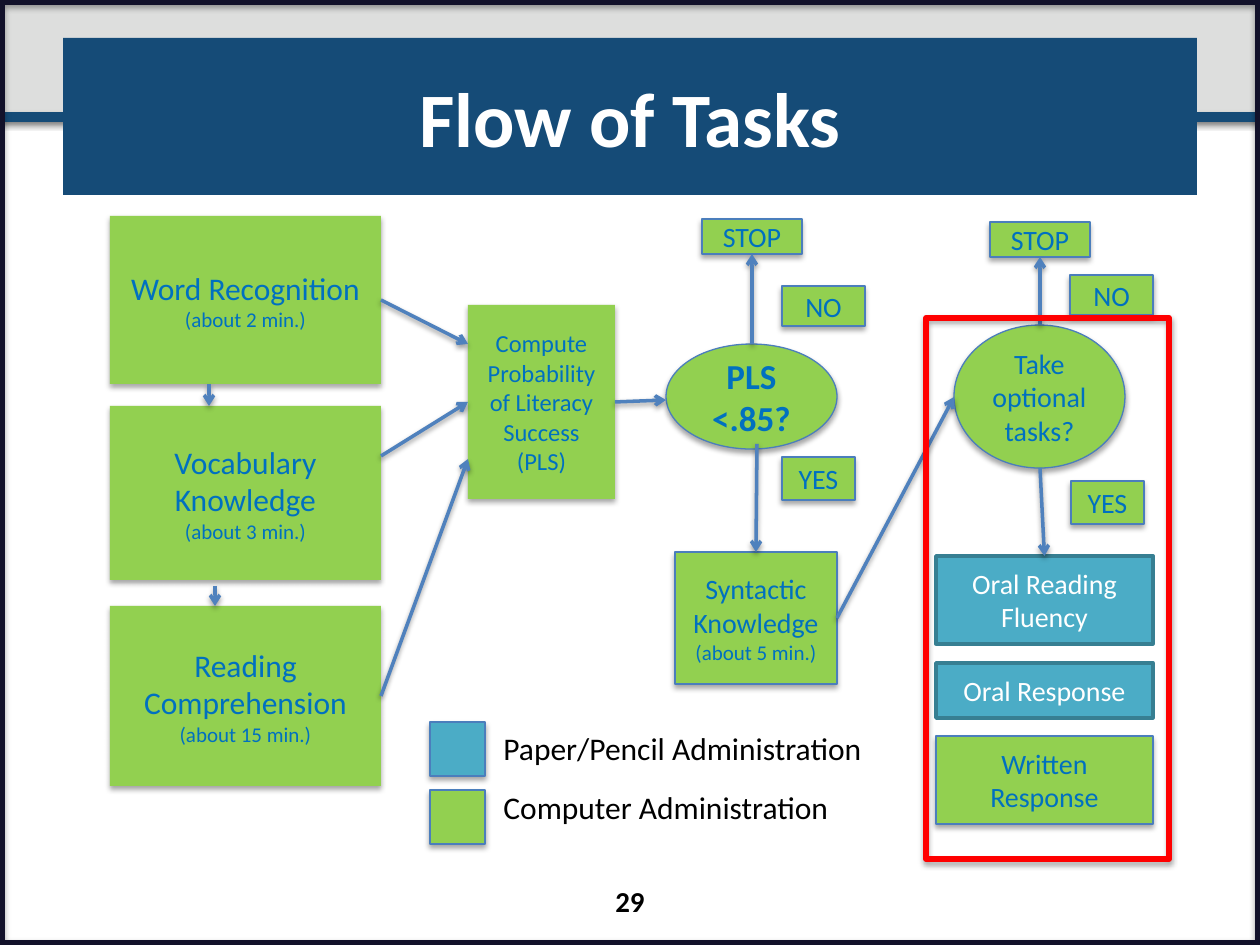
from dataclasses import dataclass

from lxml.etree import SubElement
from pptx import Presentation
from pptx.dml.color import RGBColor
from pptx.enum.shapes import MSO_CONNECTOR, MSO_SHAPE
from pptx.enum.text import MSO_ANCHOR, PP_ALIGN
from pptx.oxml.ns import qn
from pptx.util import Pt

SCALE = 914400 / 126
TOP, LEFT, BOTTOM, RIGHT = range(4)


@dataclass(frozen=True)
class Theme:
    """Colours, type sizes and line widths of the slide."""
    font: str = "Calibri"
    navy: str = "154B77"
    ink: str = "12112A"
    grey: str = "DDDEDD"
    green: str = "92D050"
    teal: str = "4BACC6"
    edge: str = "4B7EBC"
    rim: str = "377F92"
    arrow: str = "4F81BD"
    blue: str = "0070C0"
    red: str = "FF0000"
    white: str = "FFFFFF"
    black: str = "000000"
    title: float = 44
    large: float = 20
    task: float = 18
    page: float = 16.5
    body: float = 16
    small: float = 14
    note: float = 12
    thin: float = 0.75
    thick: float = 2
    bold: float = 3.25
    frame: float = 6


T = Theme()


def px(*vals):
    """Turn px lengths into EMU."""
    return [round(v * SCALE) for v in vals]


def rgb(code):
    """Make a colour from its hex code."""
    return RGBColor.from_string(code)


def shade(shape, alpha=35, dist=1.8):
    """Give a shape a soft drop shadow, or none when alpha is 0."""
    effect = SubElement(shape.element.spPr, qn("a:effectLst"))
    if alpha:
        drop = SubElement(effect, qn("a:outerShdw"), blurRad=str(Pt(3.1)),
                          dist=str(Pt(dist)), dir="5400000", rotWithShape="0")
        tint = SubElement(drop, qn("a:srgbClr"), val=T.black)
        SubElement(tint, qn("a:alpha"), val=str(alpha * 1000))


def write(shape, lines, color, bold=False, align=PP_ALIGN.CENTER):
    """Write (text, size) lines as paragraphs of one run each."""
    frame = shape.text_frame
    frame.word_wrap = True
    frame.vertical_anchor = MSO_ANCHOR.MIDDLE
    for i, (text, size) in enumerate(lines):
        para = frame.add_paragraph() if i else frame.paragraphs[0]
        para.alignment = align
        run = para.add_run()
        run.text = text
        run.font.name, run.font.size, run.font.bold = T.font, Pt(size), bold
        run.font.color.rgb = rgb(color)


def shape(slide, area, fill=None, line=None, width=T.thin,
          kind=MSO_SHAPE.RECTANGLE, alpha=35):
    """Add a preset shape with its fill, outline and shadow."""
    item = slide.shapes.add_shape(kind, *px(*area))
    if fill:
        item.fill.solid()
        item.fill.fore_color.rgb = rgb(fill)
    else:
        item.fill.background()
    if line:
        item.line.color.rgb = rgb(line)
        item.line.width = Pt(width)
    else:
        item.line.fill.background()
    shade(item, alpha)
    return item


def node(slide, area, *lines, line=T.edge, bold=False, kind=MSO_SHAPE.RECTANGLE):
    """Add a green step of the flow."""
    item = shape(slide, area, T.green, line, kind=kind)
    write(item, lines, T.blue, bold)
    return item


def paper(slide, area, text):
    """Add a teal step done on paper."""
    item = shape(slide, area, T.teal, T.rim, T.thick, alpha=0)
    write(item, [(text, T.body)], T.white)
    return item


def label(slide, area, text, size, bold=False, align=PP_ALIGN.LEFT):
    """Add a plain line of black text."""
    box = slide.shapes.add_textbox(*px(*area))
    write(box, [(text, size)], T.black, bold, align)


def stroke(slide, color, width):
    """Add a straight connector, still to be placed."""
    item = slide.shapes.add_connector(MSO_CONNECTOR.STRAIGHT, 0, 0, 0, 0)
    item.line.color.rgb = rgb(color)
    item.line.width = Pt(width)
    shade(item, 38, 1.6)
    return item


def place(item, start, stop):
    """Set both ends, each a point or a (shape, side) pair."""
    if isinstance(start[0], int):
        item.begin_x, item.begin_y = px(*start)
    else:
        item.begin_connect(*start)
    if isinstance(stop[0], int):
        item.end_x, item.end_y = px(*stop)
    else:
        item.end_connect(*stop)


def arrow(slide, start, stop):
    """Add an arrow from start to stop."""
    item = stroke(slide, T.arrow, T.thick)
    place(item, start, stop)
    SubElement(item.element.spPr.find(qn("a:ln")), qn("a:tailEnd"), type="arrow")


def backdrop(slide):
    """Add the top band, its rule and the slide frame."""
    shape(slide, (0, 0, 1260, 117), T.grey)
    place(stroke(slide, T.navy, T.frame), (1260, 117), (0, 117))
    shape(slide, (0, 0, 1260, 945), line=T.ink, width=T.frame)


def heading(slide, text):
    """Fill the title placeholder and bring it above the backdrop."""
    head = slide.shapes.title
    head.left, head.top, head.width, head.height = px(63, 38, 1134, 157)
    head.fill.solid()
    head.fill.fore_color.rgb = rgb(T.navy)
    write(head, [(text, T.title)], T.white, True)
    head.element.getparent().append(head.element)


def main():
    """Build the slide and save it."""
    deck = Presentation()
    deck.slide_width, deck.slide_height = px(1260, 945)
    slide = deck.slides.add_slide(deck.slide_layouts[5])
    backdrop(slide)
    heading(slide, "Flow of Tasks")

    tasks = [(216, 168, "Word Recognition", 2),
             (406, 174, "Vocabulary Knowledge", 3),
             (606, 180, "Reading Comprehension", 15)]
    word, _, read = [
        node(slide, (110, y, 271, h), (name, T.task),
             (f"(about {mins} min.)", T.note), line=None)
        for y, h, name, mins in tasks]
    score = node(slide, (468, 305, 147, 194),
                 ("Compute Probability of Literacy Success", T.small),
                 ("(PLS)", T.small), line=None)
    node(slide, (666, 344, 171, 105), ("PLS", T.large), ("<.85?", T.large),
         bold=True, kind=MSO_SHAPE.OVAL)
    node(slide, (954, 325, 171, 143), ("Take optional tasks?", T.body),
         kind=MSO_SHAPE.OVAL)
    syntax = node(slide, (675, 552, 162, 132), ("Syntactic Knowledge", T.body),
                  ("(about 5 min.)", T.note))
    ends = [node(slide, (x, y, 100, 35), ("STOP", T.body))
            for x, y in ((702, 219), (990, 222))]
    for x, y, w, h, text in ((782, 286, 83, 40, "NO"), (1070, 275, 83, 40, "NO"),
                             (782, 457, 73, 43, "YES"), (1071, 481, 73, 43, "YES")):
        node(slide, (x, y, w, h), (text, T.body))
    oral = paper(slide, (936, 556, 217, 88), "Oral Reading Fluency")
    paper(slide, (936, 663, 217, 55), "Oral Response")
    node(slide, (936, 736, 217, 88), ("Written Response", T.body))

    for start, stop in (
            ((209, 384), (209, 406)),
            ((215, 586), (215, 606)),
            ((word, RIGHT), (468, 344)),
            ((381, 456), (score, LEFT)),
            ((read, RIGHT), (468, 459)),
            ((score, RIGHT), (666, 400)),
            ((752, 344), (ends[0], BOTTOM)),
            ((757, 444), (syntax, TOP)),
            ((syntax, RIGHT), (954, 397)),
            ((1040, 325), (ends[1], BOTTOM)),
            ((1040, 468), (oral, TOP))):
        arrow(slide, start, stop)

    for y, top, fill, text in ((722, 722, T.teal, "Paper/Pencil Administration"),
                               (790, 781, T.green, "Computer Administration")):
        shape(slide, (430, y, 55, 54), fill, T.edge)
        label(slide, (491, top, 410, 51), text, T.task)
    shape(slide, (926, 318, 243, 541), line=T.red, width=T.bold)
    label(slide, (483, 876, 294, 50), "29", T.page, True, PP_ALIGN.CENTER)
    deck.save("out.pptx")


if __name__ == "__main__":
    main()
